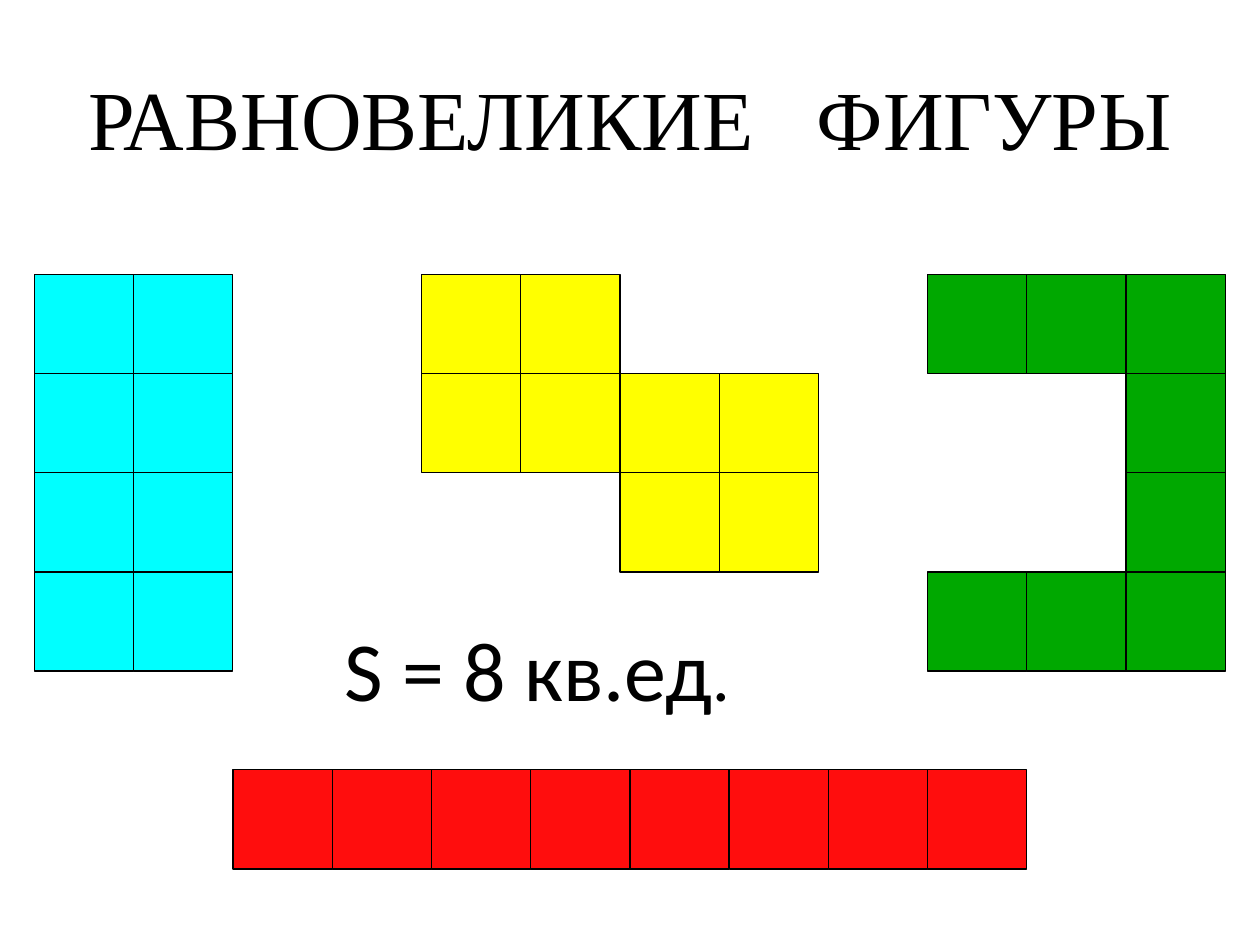
"""Build a slide of four equal-area figures made of unit squares."""
from dataclasses import dataclass

from pptx import Presentation
from pptx.dml.color import RGBColor
from pptx.enum.shapes import MSO_SHAPE
from pptx.enum.text import MSO_ANCHOR, MSO_AUTO_SIZE, PP_ALIGN
from pptx.util import Cm, Pt

RECTANGLE = MSO_SHAPE.RECTANGLE
MIDDLE = MSO_ANCHOR.MIDDLE
GROW = MSO_AUTO_SIZE.SHAPE_TO_FIT_TEXT
CENTER = PP_ALIGN.CENTER
COLORS = {
    "black": "000000",
    "cyan": "00FFFF",
    "yellow": "FFFF00",
    "red": "FF0D0D",
    "green": "00A800",
}
UNIT = 2
FIGURES_TOP = 5.53


@dataclass
class Figure:
    """A figure drawn from rows in which # marks a unit square."""

    color: str
    left: float
    top: float
    rows: tuple[str, ...]


@dataclass
class Span:
    """A stretch of text with its font and extra letter spacing in points."""

    text: str
    font: str
    size: int
    spacing: int = 0


FIGURES = (
    Figure("cyan", 0.69, FIGURES_TOP, ("##",) * 4),
    Figure("yellow", 8.5, FIGURES_TOP, ("##..", "####", "..##")),
    Figure("red", 4.7, 15.52, ("#" * 8,)),
    Figure("green", 18.7, FIGURES_TOP, ("###", "..#", "..#", "###")),
)
TITLE = (
    Span("РАВНОВЕЛИКИЕ", "Times New Roman", 48),
    Span(" ", "Times New Roman", 48, 24),
    Span("ФИГУРЫ", "Times New Roman", 48),
)
AREA = (Span("S = 8 кв.ед", "Calibri", 48), Span(".", "Calibri", 40))


def rgb(name: str) -> RGBColor:
    """Return the named colour."""
    return RGBColor.from_string(COLORS[name])


def draw_square(page, left: float, top: float, color: str) -> None:
    """Draw one outlined unit square."""
    square = page.shapes.add_shape(RECTANGLE, Cm(left), Cm(top), Cm(UNIT), Cm(UNIT))
    square.shadow.inherit = False
    square.fill.solid()
    square.fill.fore_color.rgb = rgb(color)
    square.line.color.rgb = rgb("black")
    square.line.width = Pt(0.75)


def draw_figure(page, figure: Figure) -> None:
    """Draw every unit square of a figure."""
    for row, cells in enumerate(figure.rows):
        for column, cell in enumerate(cells):
            if cell == "#":
                left = figure.left + column * UNIT
                draw_square(page, left, figure.top + row * UNIT, figure.color)


def add_text(page, left: float, top: float, width: float, height: float,
             spans: tuple[Span, ...]):
    """Add a one-paragraph text box and return it."""
    box = page.shapes.add_textbox(Cm(left), Cm(top), Cm(width), Cm(height))
    para = box.text_frame.paragraphs[0]
    for span in spans:
        run = para.add_run()
        run.text = span.text
        run.font.name = span.font
        run.font.size = Pt(span.size)
        run.font.color.rgb = rgb("black")
        if span.spacing:
            run._r.get_or_add_rPr().set("spc", str(span.spacing * 100))
    return box


def main() -> None:
    """Build and save the deck."""
    deck = Presentation()
    deck.slide_width, deck.slide_height = Cm(25.4), Cm(19.05)
    page = deck.slides.add_slide(deck.slide_layouts[6])
    for figure in FIGURES:
        draw_figure(page, figure)

    title = add_text(page, 1.27, 0.76, 22.86, 3.18, TITLE)
    title.text_frame.word_wrap = True
    title.text_frame.vertical_anchor = MIDDLE
    title.text_frame.paragraphs[0].alignment = CENTER

    area = add_text(page, 6.7, 12.32, 8.53, 2.29, AREA)
    area.text_frame.word_wrap = False
    area.text_frame.auto_size = GROW
    deck.save("out.pptx")


if __name__ == "__main__":
    main()
